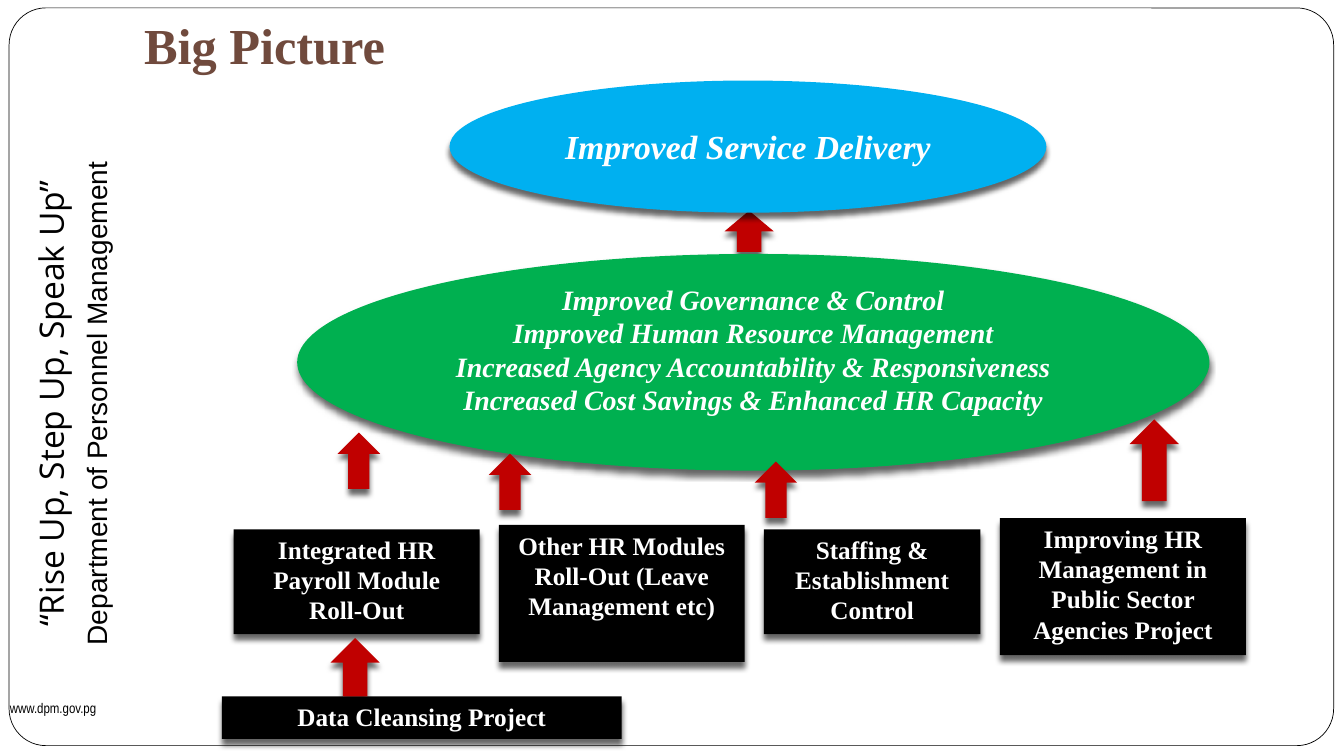
from typing import NamedTuple

from lxml import etree
from pptx import Presentation
from pptx.dml.color import RGBColor
from pptx.enum.shapes import MSO_SHAPE
from pptx.enum.text import MSO_ANCHOR, PP_ALIGN
from pptx.oxml.ns import qn
from pptx.util import Cm, Pt

BLACK = RGBColor(0x00, 0x00, 0x00)
WHITE = RGBColor(0xFF, 0xFF, 0xFF)
BROWN = RGBColor(0x70, 0x4A, 0x3D)
BLUE = RGBColor(0x00, 0xB0, 0xF0)
GREEN = RGBColor(0x00, 0xB0, 0x50)
RED = RGBColor(0xC0, 0x00, 0x00)

RECTANGLE = MSO_SHAPE.RECTANGLE
ROUNDED = MSO_SHAPE.ROUNDED_RECTANGLE
OVAL = MSO_SHAPE.OVAL
UP_ARROW = MSO_SHAPE.UP_ARROW
TOP, MIDDLE, BOTTOM = MSO_ANCHOR.TOP, MSO_ANCHOR.MIDDLE, MSO_ANCHOR.BOTTOM
LEFT, CENTER = PP_ALIGN.LEFT, PP_ALIGN.CENTER

SERIF = "Times New Roman"


class Area(NamedTuple):
    """Left, top, width and height in centimetres."""
    left: float
    top: float
    width: float
    height: float

    def lengths(self):
        return [Cm(value) for value in self]


class Style(NamedTuple):
    font: str
    size: float
    color: RGBColor = BLACK
    bold: bool = False
    italic: bool = False


class Goal(NamedTuple):
    area: Area
    color: RGBColor
    size: float
    lines: list[str]
    bottom_inset: float


class Project(NamedTuple):
    area: Area
    lines: list[str]


GOALS = [
    Goal(Area(11.33, 2.03, 15.04, 3.33), BLUE, 24, ["Improved Service Delivery"], 0.13),
    Goal(Area(7.49, 6.4, 22.99, 5.46), GREEN, 20, [
        "Improved Governance & Control",
        "Improved Human Resource Management",
        "Increased Agency Accountability & Responsiveness",
        "Increased Cost Savings & Enhanced HR Capacity",
    ], 0.78),
]
PROJECTS = [
    Project(Area(5.89, 13.34, 6.2, 2.64), ["Integrated HR Payroll Module", "Roll-Out"]),
    Project(Area(12.57, 13.23, 6.2, 3.45), ["Other HR Modules Roll-Out (Leave Management etc)"]),
    Project(Area(19.25, 13.34, 5.46, 2.64), ["Staffing & Establishment Control"]),
    Project(Area(25.2, 13.06, 6.2, 3.45),
            ["Improving HR Management in Public Sector Agencies Project"]),
    Project(Area(5.59, 17.55, 10.08, 1.07), ["Data Cleansing Project"]),
]
DELIVERY_ARROW = Area(18.26, 5.31, 1.24, 1.04)
PROJECT_ARROWS = [
    Area(28.47, 10.57, 1.24, 2.06),
    Area(8.33, 16.08, 1.24, 1.47),
    Area(8.51, 10.9, 1.07, 1.42),
    Area(12.32, 11.43, 1.07, 1.42),
    Area(19.02, 11.63, 1.07, 1.42),
]


def write_lines(shape, lines: list[str], styles: list[Style], alignment, anchor) -> None:
    """Write one paragraph for each line, each with its own style."""
    frame = shape.text_frame
    frame.word_wrap = True
    frame.vertical_anchor = anchor
    frame.text = "\n".join(lines)
    for paragraph, style in zip(frame.paragraphs, styles):
        paragraph.alignment = alignment
        for run in paragraph.runs:
            run.font.name = style.font
            run.font.size = Pt(style.size)
            run.font.color.rgb = style.color
            run.font.bold = style.bold
            run.font.italic = style.italic


def add_shadow(shape) -> None:
    """Add a soft black shadow straight below the shape."""
    shape.shadow.inherit = False
    effects = shape.element.spPr.find(qn("a:effectLst"))
    shadow = etree.SubElement(effects, qn("a:outerShdw"), blurRad=str(Pt(4)),
                              dist=str(Pt(4)), dir="5400000", rotWithShape="0")
    color = etree.SubElement(shadow, qn("a:srgbClr"), val=str(BLACK))
    etree.SubElement(color, qn("a:alpha"), val="60000")


def add_solid(slide, kind, area: Area, color: RGBColor):
    shape = slide.shapes.add_shape(kind, *area.lengths())
    shape.fill.solid()
    shape.fill.fore_color.rgb = color
    shape.line.fill.background()
    add_shadow(shape)
    return shape


def add_label(slide, area: Area, lines: list[str], styles: list[Style],
              alignment=LEFT, anchor=TOP):
    label = slide.shapes.add_textbox(*area.lengths())
    write_lines(label, lines, styles, alignment, anchor)
    return label


def add_border(slide) -> None:
    border = slide.shapes.add_shape(ROUNDED, *Area(0.23, 0.2, 33.38, 18.59).lengths())
    border.adjustments[0] = 0.05
    border.fill.solid()
    border.fill.fore_color.rgb = WHITE
    border.line.color.rgb = BLACK
    border.line.width = Pt(0.5)
    border.shadow.inherit = False


def add_labels(slide) -> None:
    motto = add_label(slide, Area(-6.22, 8.99, 16.08, 2.36),
                      ["“Rise Up, Step Up, Speak Up”", "Department of Personnel Management"],
                      [Style("Open Sans", 24), Style("Arial", 20)], CENTER)
    motto.rotation = 270
    motto.text_frame.paragraphs[1].space_before = Pt(6)
    add_label(slide, Area(0, 17.5, 3.96, 0.71), ["www.dpm.gov.pg"], [Style("Arial Narrow", 10)])
    title = add_label(slide, Area(3.38, 0.15, 29.64, 1.98), ["Big Picture"],
                      [Style(SERIF, 36, BROWN, bold=True)], anchor=BOTTOM)
    title.text_frame.margin_bottom = Cm(0.25)


def add_goal(slide, goal: Goal) -> None:
    oval = add_solid(slide, OVAL, goal.area, goal.color)
    style = Style(SERIF, goal.size, WHITE, bold=True, italic=True)
    write_lines(oval, goal.lines, [style] * len(goal.lines), CENTER, MIDDLE)
    oval.text_frame.margin_bottom = Cm(goal.bottom_inset)


def add_project(slide, project: Project) -> None:
    box = add_solid(slide, RECTANGLE, project.area, BLACK)
    style = Style(SERIF, 18, WHITE, bold=True)
    write_lines(box, project.lines, [style] * len(project.lines), CENTER, TOP)


def main() -> None:
    presentation = Presentation()
    presentation.slide_width = Cm(33.87)
    presentation.slide_height = Cm(19.05)
    slide = presentation.slides.add_slide(presentation.slide_layouts[6])

    add_border(slide)
    add_labels(slide)
    add_solid(slide, UP_ARROW, DELIVERY_ARROW, RED)
    for goal in GOALS:
        add_goal(slide, goal)
    for project in PROJECTS:
        add_project(slide, project)
    for area in PROJECT_ARROWS:
        add_solid(slide, UP_ARROW, area, RED)

    presentation.save("out.pptx")


if __name__ == "__main__":
    main()
